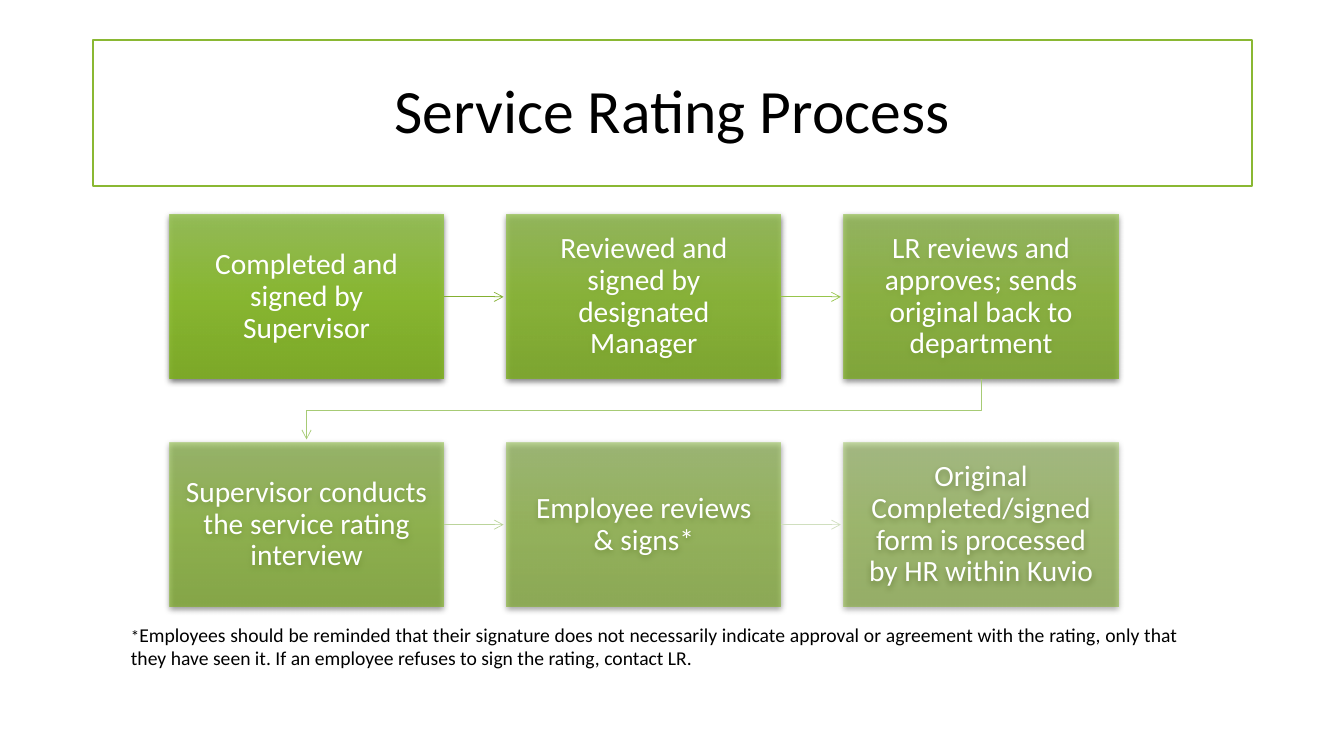
from lxml import etree
from pptx import Presentation
from pptx.dml.color import RGBColor
from pptx.enum.shapes import MSO_CONNECTOR, MSO_SHAPE
from pptx.enum.text import MSO_ANCHOR, MSO_AUTO_SIZE, PP_ALIGN
from pptx.oxml import parse_xml
from pptx.oxml.ns import nsdecls, qn
from pptx.util import Inches, Pt

RECT = MSO_SHAPE.RECTANGLE
STRAIGHT = MSO_CONNECTOR.STRAIGHT
MIDDLE = MSO_ANCHOR.MIDDLE
CENTER, JUSTIFY = PP_ALIGN.CENTER, PP_ALIGN.JUSTIFY

GREEN = RGBColor(0x8A, 0xB8, 0x33)
BLACK = RGBColor(0x00, 0x00, 0x00)
WHITE = RGBColor(0xFF, 0xFF, 0xFF)
GRADIENT = [(0, RGBColor(0x98, 0xC2, 0x56)),
            (50, RGBColor(0x8C, 0xBF, 0x2C)),
            (100, RGBColor(0x7E, 0xAF, 0x22))]
ARROWS = [RGBColor(0x84, 0xB0, 0x31), RGBColor(0x97, 0xC5, 0x4B),
          RGBColor(0xA7, 0xCB, 0x75), RGBColor(0xBB, 0xD4, 0x9B),
          RGBColor(0xD0, 0xDF, 0xBF)]

STEPS = ["Completed and signed by Supervisor",
         "Reviewed and signed by designated Manager",
         "LR reviews and approves; sends original back to department",
         "Supervisor conducts the service rating interview",
         "Employee reviews & signs*",
         "Original Completed/signed form is processed by HR within Kuvio"]
COLS = 3
LEFT, TOP = 1.68, 2.13
BOX_W, BOX_H = 2.72, 1.63
PITCH_X, PITCH_Y = 3.345, 2.26
ARROW_GAP = 0.03


def add_text(p, text, size, color):
    r = p.add_run()
    r.text = text
    r.font.name = "Calibri"
    r.font.size = Pt(size)
    r.font.color.rgb = color


def style_arrow(s, color):
    s.line.color.rgb = color
    s.line.width = Pt(0.5)
    ln = s.line._get_or_add_ln()
    etree.SubElement(ln, qn("a:tailEnd"), type="arrow")
    sp_pr = s._element.spPr
    if sp_pr.find(qn("a:effectLst")) is None:
        etree.SubElement(sp_pr, qn("a:effectLst"))


prs = Presentation()
prs.slide_width, prs.slide_height = Inches(13.33), Inches(7.5)
slide = prs.slides.add_slide(prs.slide_layouts[5])

# Title
title = slide.shapes.title
title.left, title.top = Inches(0.92), Inches(0.4)
title.width, title.height = Inches(11.5), Inches(1.45)
title.line.color.rgb = GREEN
title.line.width = Pt(1.5)
title.text_frame.vertical_anchor = MIDDLE
p = title.text_frame.paragraphs[0]
p.alignment = CENTER
p.line_spacing = 0.9
add_text(p, "Service Rating Process", 44, BLACK)

# Step boxes, each more transparent than the one before
boxes = []
for i, step in enumerate(STEPS):
    row, col = divmod(i, COLS)
    box = slide.shapes.add_shape(
        RECT, Inches(LEFT + col * PITCH_X), Inches(TOP + row * PITCH_Y),
        Inches(BOX_W), Inches(BOX_H))
    boxes.append(box)
    alpha = (90 - 8 * i) * 1000
    stops = "".join(
        f'<a:gs pos="{pos * 1000}"><a:srgbClr val="{color}">'
        f'<a:alpha val="{alpha}"/></a:srgbClr></a:gs>'
        for pos, color in GRADIENT)
    sp_pr = box._element.spPr
    sp_pr.append(parse_xml(
        f'<a:gradFill {nsdecls("a")} rotWithShape="1"><a:gsLst>{stops}</a:gsLst>'
        '<a:lin ang="5400000" scaled="0"/></a:gradFill>'))
    box.line.fill.background()
    sp_pr.append(parse_xml(
        f'<a:effectLst {nsdecls("a")}><a:outerShdw blurRad="{Pt(4.5)}" '
        f'dist="{Pt(1.5)}" dir="5400000" algn="ctr" rotWithShape="0">'
        '<a:srgbClr val="000000"><a:alpha val="63000"/></a:srgbClr>'
        '</a:outerShdw></a:effectLst>'))
    tf = box.text_frame
    tf.word_wrap = True
    tf.vertical_anchor = MIDDLE
    tf.margin_left = tf.margin_right = Inches(0.16)
    tf.margin_top = tf.margin_bottom = Inches(0.16)
    p = tf.paragraphs[0]
    p.alignment = CENTER
    p.line_spacing = 0.9
    add_text(p, step, 21, WHITE)

# Arrows between steps: straight along a row, bent down to the next row
for i, color in enumerate(ARROWS):
    box, target = boxes[i], boxes[i + 1]
    if (i + 1) % COLS:
        y = box.top + box.height // 2
        arrow = slide.shapes.add_connector(
            STRAIGHT, box.left + box.width, y,
            target.left - Inches(ARROW_GAP), y)
        arrow.begin_connect(box, 3)
    else:
        start_x = box.left + box.width // 2
        end_x = target.left + target.width // 2
        bottom = box.top + box.height
        bend_y = (bottom + target.top) // 2
        path = slide.shapes.build_freeform(start_x, bottom)
        path.add_line_segments(
            [(start_x, bend_y), (end_x, bend_y),
             (end_x, target.top - Inches(ARROW_GAP))], close=False)
        arrow = path.convert_to_shape()
        arrow.fill.background()
    style_arrow(arrow, color)

# Footnote
note = slide.shapes.add_textbox(Inches(1.2), Inches(6.13), Inches(10.59), Inches(0.57))
tf = note.text_frame
tf.word_wrap = True
tf.auto_size = MSO_AUTO_SIZE.SHAPE_TO_FIT_TEXT
p = tf.paragraphs[0]
p.alignment = JUSTIFY
add_text(p, "*", 12, BLACK)
add_text(p, "Employees should be reminded that their signature does not necessarily "
            "indicate approval or agreement with the rating, only that they have seen it. "
            "If an employee refuses to sign the rating, contact LR.", 14, BLACK)

prs.save("out.pptx")
